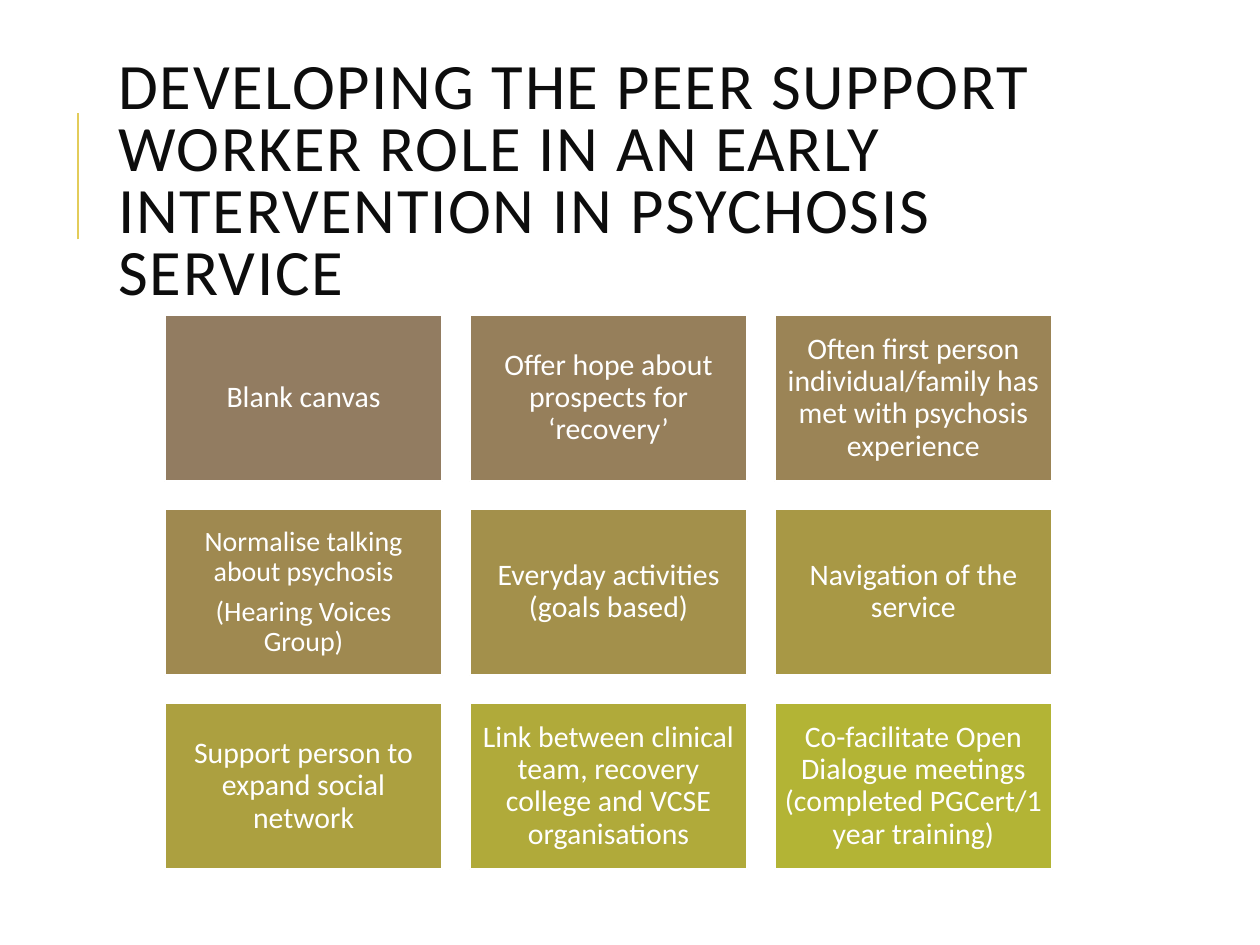
"""Build the slide on developing the peer support worker role."""
import pptx
import pptx.dml.color
import pptx.enum.shapes
import pptx.enum.text
import pptx.oxml.xmlchemy
import pptx.util

Inches = pptx.util.Inches
Pt = pptx.util.Pt
RGBColor = pptx.dml.color.RGBColor
PP_ALIGN = pptx.enum.text.PP_ALIGN

WHITE = RGBColor(0xFF, 0xFF, 0xFF)
INK = RGBColor(0x0D, 0x0D, 0x0D)
GOLD = RGBColor(0xE3, 0xCC, 0x5A)
FONT = "Calibri"
TITLE = ("DEVELOPING THE PEER SUPPORT WORKER ROLE IN AN EARLY "
         "INTERVENTION IN PSYCHOSIS SERVICE")

COLUMNS = 3
GRID_LEFT, GRID_TOP = 1.31, 2.5
TILE_WIDTH, TILE_HEIGHT = 2.2, 1.32
GAP = 0.22
TILES = [
    (RGBColor(0x92, 0x7C, 0x61), 17, ["Blank canvas"]),
    (RGBColor(0x96, 0x7F, 0x5B), 17, ["Offer hope about prospects for ‘recovery’"]),
    (RGBColor(0x9B, 0x84, 0x56), 17,
     ["Often first person individual/family has met with psychosis experience"]),
    (RGBColor(0x9F, 0x89, 0x50), 16,
     ["Normalise talking about psychosis", "(Hearing Voices Group)"]),
    (RGBColor(0xA3, 0x90, 0x4B), 17, ["Everyday activities (goals based)"]),
    (RGBColor(0xA8, 0x98, 0x45), 17, ["Navigation of the service"]),
    (RGBColor(0xAC, 0xA0, 0x40), 17, ["Support person to expand social network"]),
    (RGBColor(0xB0, 0xAA, 0x3A), 17,
     ["Link between clinical team, recovery college and VCSE organisations"]),
    (RGBColor(0xB3, 0xB4, 0x35), 17,
     ["Co-facilitate Open Dialogue meetings (completed PGCert/1 year training)"]),
]


def write_text(para, text, *, size, color, align, line_spacing, after=0, tracking=0):
    """Fill a paragraph with one formatted run."""
    para.alignment = align
    para.line_spacing = line_spacing
    para.space_before = Pt(0)
    para.space_after = Pt(after)
    span = para.add_run()
    span.text = text
    span.font.name = FONT
    span.font.size = Pt(size)
    span.font.color.rgb = color
    if tracking:
        span._r.get_or_add_rPr().set("spc", str(tracking * 100))


def prepare_frame(frame):
    """Wrap the text, centre it vertically and keep its size fixed."""
    frame.word_wrap = True
    frame.auto_size = pptx.enum.text.MSO_AUTO_SIZE.NONE
    frame.vertical_anchor = pptx.enum.text.MSO_ANCHOR.MIDDLE


def add_title(page):
    """Place and format the title placeholder."""
    title = page.shapes.title
    title.left, title.top = Inches(0.84), Inches(0.64)
    title.width, title.height = Inches(7.97), Inches(1.64)
    prepare_frame(title.text_frame)
    write_text(title.text_frame.paragraphs[0], TITLE, size=37, color=INK,
               align=PP_ALIGN.LEFT, line_spacing=0.8, tracking=1)


def add_accent_line(page):
    """Draw the vertical line beside the title."""
    line = page.shapes.add_connector(
        pptx.enum.shapes.MSO_CONNECTOR.STRAIGHT,
        Inches(0.62), Inches(1.9), Inches(0.62), Inches(0.9))
    line.line.color.rgb = GOLD
    line.line.width = Pt(1.5)
    line._element.spPr.append(pptx.oxml.xmlchemy.OxmlElement("a:effectLst"))


def add_tile(page, left, top, fill, size, lines):
    """Draw one coloured rectangle with centred text."""
    tile = page.shapes.add_shape(
        pptx.enum.shapes.MSO_SHAPE.RECTANGLE,
        Inches(left), Inches(top), Inches(TILE_WIDTH), Inches(TILE_HEIGHT))
    tile.shadow.inherit = False
    tile.fill.solid()
    tile.fill.fore_color.rgb = fill
    tile.line.color.rgb = WHITE
    tile.line.width = Pt(1.25)
    frame = tile.text_frame
    prepare_frame(frame)
    frame.margin_left = frame.margin_right = Inches(0.07)
    frame.margin_top = frame.margin_bottom = Inches(0.07)
    for index, text in enumerate(lines):
        para = frame.add_paragraph() if index else frame.paragraphs[0]
        write_text(para, text, size=size, color=WHITE, align=PP_ALIGN.CENTER,
                   line_spacing=0.9, after=round(size * 0.35, 1))


def main():
    """Build and save the deck."""
    deck = pptx.Presentation()
    deck.slide_width, deck.slide_height = Inches(10), Inches(7.5)
    page = deck.slides.add_slide(deck.slide_layouts[5])
    add_accent_line(page)
    add_title(page)
    for index, (fill, size, lines) in enumerate(TILES):
        row, column = divmod(index, COLUMNS)
        add_tile(page, GRID_LEFT + column * (TILE_WIDTH + GAP),
                 GRID_TOP + row * (TILE_HEIGHT + GAP), fill, size, lines)
    deck.save("out.pptx")


if __name__ == "__main__":
    main()
